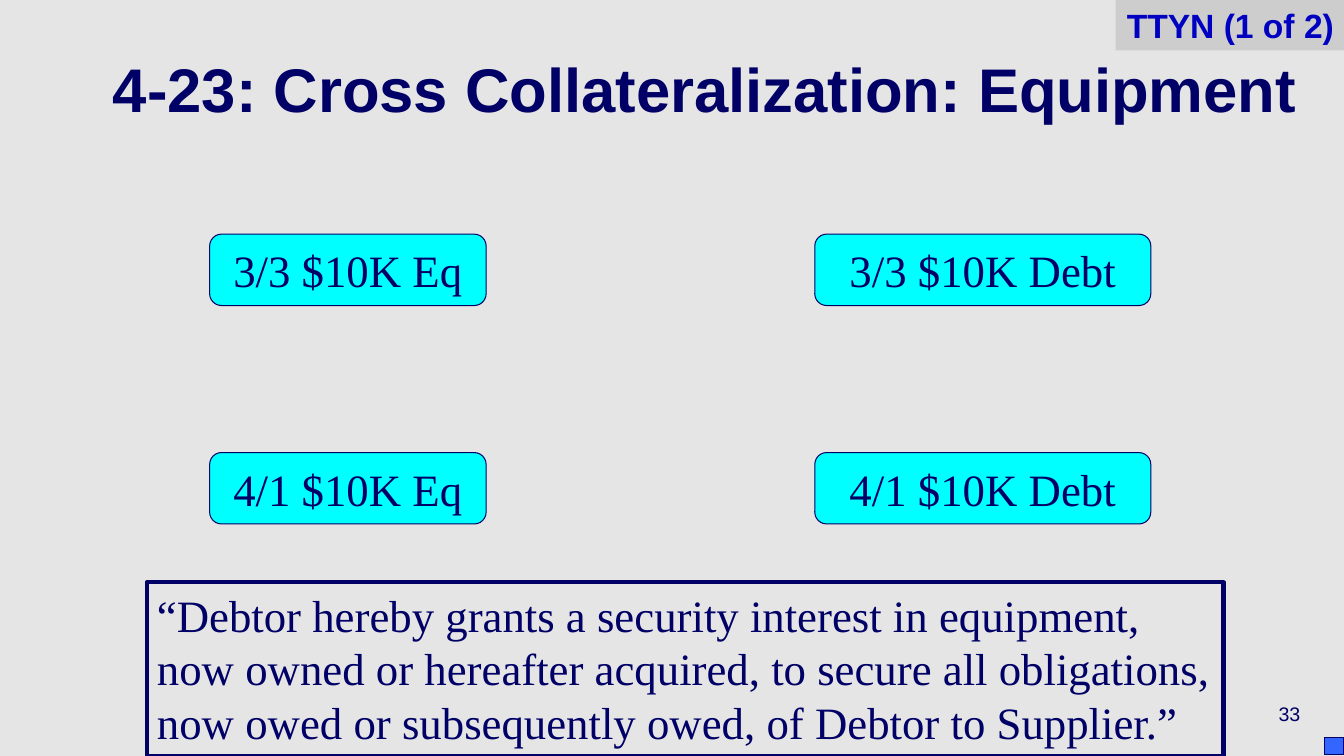
from pptx import Presentation
from pptx.util import Pt
from pptx.dml.color import RGBColor
from pptx.enum import shapes, text

COLORS = {"background": "E5E5E5", "navy": "000066", "cyan": "00FFFF",
          "marker": "3366FF", "tag": "CDCDCD", "tag_text": "0000C0"}
SHAPE = shapes.MSO_SHAPE
ALIGN = text.PP_ALIGN
ANCHOR = text.MSO_ANCHOR
SERIF = {"name": "Times New Roman", "size": Pt(32)}


def color(name):
    return RGBColor.from_string(COLORS[name])


def write(shape, words, font, text_color="navy", paragraph_format=None, frame_format=None):
    frame = shape.text_frame
    frame.text = words
    paragraph = frame.paragraphs[0]
    settings = ((frame, {"word_wrap": True, **(frame_format or {})}),
                (paragraph, paragraph_format or {}), (paragraph.font, font))
    for target, values in settings:
        for name, value in values.items():
            setattr(target, name, value)
    paragraph.font.color.rgb = color(text_color)


def add_box(slide, kind, box, fill=None, line_width=None):
    shape = slide.shapes.add_shape(kind, *map(Pt, box))
    shape.shadow.inherit = False
    if fill:
        shape.fill.solid()
        shape.fill.fore_color.rgb = color(fill)
    else:
        shape.fill.background()
    if line_width:
        shape.line.color.rgb = color("navy")
        shape.line.width = Pt(line_width)
    else:
        shape.line.fill.background()
    return shape


def add_title(slide, box):
    title = slide.shapes.title
    title.left, title.top, title.width, title.height = map(Pt, box)
    write(title, "4-23: Cross Collateralization: Equipment",
          {"name": "Arial", "size": Pt(44), "bold": True},
          paragraph_format={"alignment": ALIGN.CENTER, "line_spacing": 0.7},
          frame_format={"vertical_anchor": ANCHOR.MIDDLE})


def add_loans(slide, box):
    """Each row pairs equipment on the left with its debt on the right."""
    left, top, width, height = box
    item_height = 51
    columns = (("Eq", left, 197.5), ("Debt", left + width - 240, 240))
    for row, date in enumerate(("3/3", "4/1")):
        item_top = top + row * (height - item_height)
        for kind, item_left, item_width in columns:
            item = add_box(slide, SHAPE.FLOWCHART_ALTERNATE_PROCESS,
                           (item_left, item_top, item_width, item_height), "cyan", 0.75)
            write(item, f"{date} $10K {kind}", SERIF,
                  paragraph_format={"alignment": ALIGN.CENTER},
                  frame_format={"vertical_anchor": ANCHOR.MIDDLE})


def add_clause(slide, box):
    clause = add_box(slide, SHAPE.RECTANGLE, box, line_width=3)
    write(clause, "“Debtor hereby grants a security interest in equipment, now owned or "
          "hereafter acquired, to secure all obligations, now owed or subsequently owed, "
          "of Debtor to Supplier.”", SERIF,
          paragraph_format={"alignment": ALIGN.LEFT},
          frame_format={"vertical_anchor": ANCHOR.TOP})


def add_tag(slide, box):
    tag = add_box(slide, SHAPE.RECTANGLE, box, "tag")
    write(tag, "TTYN (1 of 2)", {"name": "Arial", "size": Pt(24), "bold": True}, "tag_text",
          {"alignment": ALIGN.RIGHT},
          {"vertical_anchor": ANCHOR.TOP, "word_wrap": False})


def add_page_number(slide, box):
    number = slide.shapes.add_textbox(*map(Pt, box))
    write(number, "33", {"name": "Arial", "size": Pt(14)},
          paragraph_format={"alignment": ALIGN.RIGHT},
          frame_format={"vertical_anchor": ANCHOR.MIDDLE})


def main():
    presentation = Presentation()
    presentation.slide_width, presentation.slide_height = Pt(960), Pt(540)
    slide = presentation.slides.add_slide(presentation.slide_layouts[5])
    slide.background.fill.solid()
    slide.background.fill.fore_color.rgb = color("background")

    add_page_number(slide, (736, 492, 200, 36))
    add_title(slide, (64, 24, 880, 90))
    add_loans(slide, (149.75, 167.25, 672.25, 207))
    add_clause(slide, (105, 416, 769, 124))
    # Corner marker
    add_box(slide, SHAPE.RECTANGLE, (946, 526.5, 14, 12.5), "marker", 0.75)
    add_tag(slide, (797, 0, 163, 36))
    presentation.save("out.pptx")


if __name__ == "__main__":
    main()
